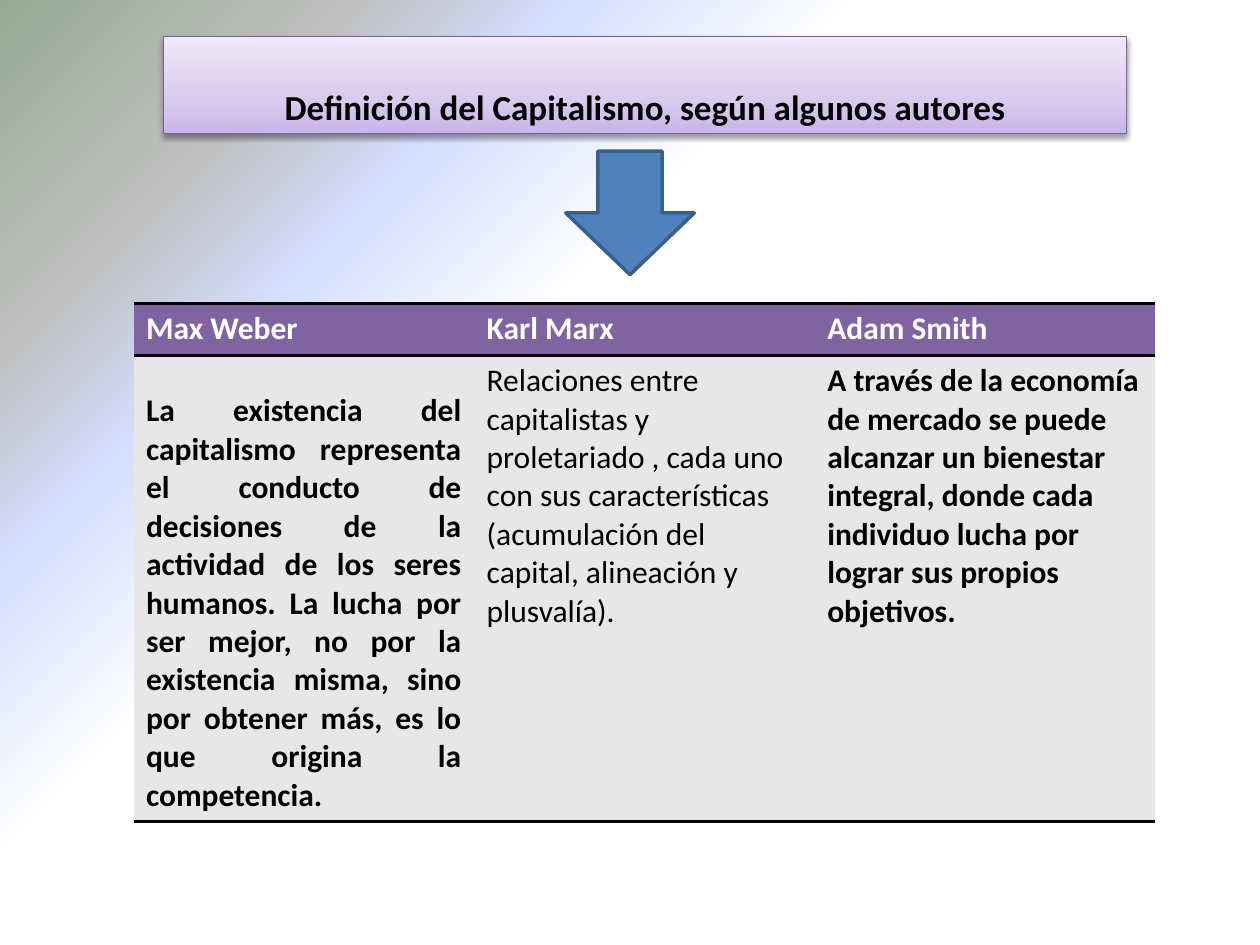
from pptx import Presentation
from pptx.dml.color import RGBColor
from pptx.enum.shapes import MSO_SHAPE as Shape
from pptx.enum.text import MSO_ANCHOR as Anchor, PP_ALIGN as Align
from pptx.oxml import parse_xml
from pptx.oxml.ns import nsdecls, qn
from pptx.util import Inches, Pt

COLORS = {
    "text": "000000", "header_text": "FFFFFF", "header": "8064A2", "body": "E7E7E7",
    "rule": "000000", "title_line": "7D60A0", "arrow": "4F81BD", "arrow_line": "3A5F8C",
}
FONT = "Calibri"
NS = nsdecls("a")

# Gradient stops: position in percent, colour, opacity in percent
BACKDROP_STOPS = [(0, "FFFFFF", 100), (61, "FFFFFF", 100), (74, "D4DEFF", 100),
                  (84, "BFBFBF", 43), (100, "96AB94", 100)]
TITLE_STOPS = [(0, "C9B5E8", 100), (35, "D8CBEE", 100), (100, "F0EAF9", 100)]

# Author, definition, bold, alignment, extra space above in inches
AUTHORS = [
    ("Max Weber",
     "La existencia del capitalismo representa el conducto de decisiones de la actividad "
     "de los seres humanos. La lucha por ser mejor, no por la existencia misma, sino por "
     "obtener más, es lo que origina la competencia.", True, Align.JUSTIFY, 0.24),
    ("Karl Marx",
     "Relaciones entre capitalistas y proletariado , cada uno con sus características "
     "(acumulación del capital, alineación y plusvalía).", False, Align.LEFT, 0),
    ("Adam Smith",
     "A través de la economía de mercado se puede alcanzar un bienestar integral, donde "
     "cada individuo lucha por lograr sus propios objetivos.", True, Align.LEFT, 0),
]


def rgb(name):
    return RGBColor.from_string(COLORS[name])


def set_gradient(fill, holder, stops, direction):
    """Give the holder element a gradient in place of its solid fill."""
    fill.solid()
    stop_xml = "".join(
        f'<a:gs pos="{pos * 1000}"><a:srgbClr val="{color}">'
        f'<a:alpha val="{alpha * 1000}"/></a:srgbClr></a:gs>'
        for pos, color, alpha in stops)
    gradient = parse_xml(f'<a:gradFill {NS} rotWithShape="1"><a:gsLst>{stop_xml}</a:gsLst>'
                         f'{direction}</a:gradFill>')
    holder.replace(holder.find(qn("a:solidFill")), gradient)


def write(frame, text, size, color, bold, align):
    paragraph = frame.paragraphs[0]
    paragraph.alignment = align
    run = paragraph.add_run()
    run.text = text
    run.font.name, run.font.size, run.font.bold = FONT, Pt(size), bold
    run.font.color.rgb = rgb(color)


def set_borders(cell, ruled):
    """Draw black rules on the named sides and clear the others."""
    properties = cell._tc.get_or_add_tcPr()
    for index, side in enumerate("LRTB"):
        paint = (f'<a:solidFill><a:srgbClr val="{COLORS["rule"]}"/></a:solidFill>'
                 if side in ruled else "<a:noFill/>")
        properties.insert(index, parse_xml(
            f'<a:ln{side} {NS} w="{Pt(2)}">{paint}</a:ln{side}>'))


def add_backdrop(slide):
    fill = slide.background.fill
    fill.solid()
    holder = slide._element.find(".//" + qn("p:bgPr"))
    set_gradient(fill, holder, BACKDROP_STOPS,
                 '<a:path path="circle"><a:fillToRect l="100000" t="100000"/></a:path>')


def add_title(slide, left, top, width, height):
    banner = slide.shapes.add_shape(Shape.RECTANGLE, left, top, width, height)
    properties = banner._element.spPr
    set_gradient(banner.fill, properties, TITLE_STOPS, '<a:lin ang="16200000" scaled="1"/>')
    banner.line.color.rgb = rgb("title_line")
    banner.line.width = Pt(0.75)

    # Soft shadow below the banner
    banner.shadow.inherit = False
    properties.find(qn("a:effectLst")).append(parse_xml(
        f'<a:outerShdw {NS} blurRad="{Pt(3.1)}" dist="{Pt(1.6)}" dir="5400000" '
        'rotWithShape="0"><a:srgbClr val="000000"><a:alpha val="38000"/></a:srgbClr>'
        '</a:outerShdw>'))

    frame = banner.text_frame
    frame.word_wrap = True
    frame.vertical_anchor = Anchor.BOTTOM
    write(frame, "Definición del Capitalismo, según algunos autores", 20, "text", True,
          Align.CENTER)


def add_arrow(slide, left, top, width, height):
    arrow = slide.shapes.add_shape(Shape.DOWN_ARROW, left, top, width, height)
    arrow.shadow.inherit = False
    arrow.fill.solid()
    arrow.fill.fore_color.rgb = rgb("arrow")
    arrow.line.color.rgb = rgb("arrow_line")
    arrow.line.width = Pt(2)


def add_authors(slide, left, top, width, height):
    table = slide.shapes.add_table(2, len(AUTHORS), left, top, width, height).table
    table.horz_banding = False
    header_height = Inches(0.41)
    table.rows[0].height = header_height
    table.rows[1].height = height - header_height

    for column, (author, definition, bold, align, space) in enumerate(AUTHORS):
        header, body = table.cell(0, column), table.cell(1, column)
        for cell, fill, ruled in ((header, "header", "TB"), (body, "body", "TB")):
            cell.fill.solid()
            cell.fill.fore_color.rgb = rgb(fill)
            set_borders(cell, ruled)
        body.margin_top = Inches(0.05 + space)
        write(header.text_frame, author, 18, "header_text", True, Align.LEFT)
        write(body.text_frame, definition, 18, "text", bold, align)


def main():
    prs = Presentation()
    prs.slide_width, prs.slide_height = Inches(10), Inches(7.5)
    slide = prs.slides.add_slide(prs.slide_layouts[6])
    add_backdrop(slide)
    add_authors(slide, Inches(1.06), Inches(2.41), Inches(8.11), Inches(4.1))
    add_title(slide, Inches(1.3), Inches(0.29), Inches(7.64), Inches(0.77))
    add_arrow(slide, Inches(4.49), Inches(1.2), Inches(1.02), Inches(0.98))
    prs.save("out.pptx")


if __name__ == "__main__":
    main()
